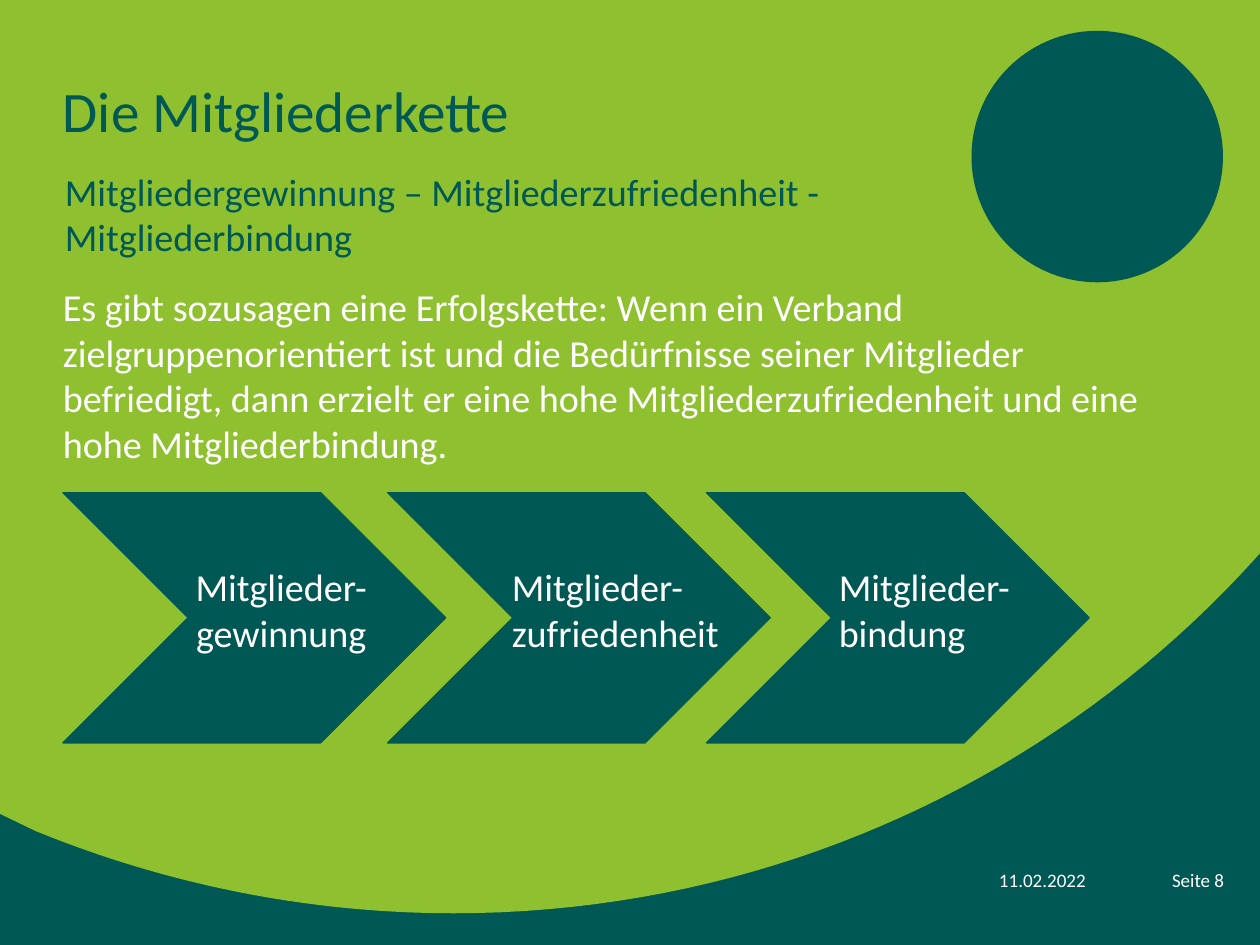
from dataclasses import dataclass

from pptx import Presentation
from pptx.dml.color import RGBColor
from pptx.enum.shapes import MSO_SHAPE
from pptx.enum.text import MSO_ANCHOR, PP_ALIGN
from pptx.shapes.autoshape import Shape
from pptx.slide import Slide
from pptx.util import Inches, Pt

TEAL = RGBColor(0x00, 0x58, 0x55)
GREEN = RGBColor(0x8E, 0xC0, 0x2F)
WHITE = RGBColor(0xFF, 0xFF, 0xFF)
FONT = "Calibri"
CHEVRON = MSO_SHAPE.CHEVRON
OVAL = MSO_SHAPE.OVAL
TOP = MSO_ANCHOR.TOP
LEFT, CENTER, RIGHT = PP_ALIGN.LEFT, PP_ALIGN.CENTER, PP_ALIGN.RIGHT

CM_PER_INCH = 2.54
SLIDE_WIDTH, SLIDE_HEIGHT = 28 / CM_PER_INCH, 21 / CM_PER_INCH
CHAIN_TOP, LINK_WIDTH, LINK_HEIGHT = 4.31, 3.35, 2.19
LABEL_TOP, LABEL_HEIGHT = 4.88, 0.91
FOOTER_TOP, FOOTER_HEIGHT = 7.6, 0.39
CURVE_STEPS = 40

Point = tuple[float, float]


@dataclass(frozen=True)
class Passage:
    text: str
    left: float
    top: float
    width: float
    height: float
    size: int
    color: RGBColor = WHITE
    align: PP_ALIGN = LEFT
    inset_x: float = 0
    inset_y: float = 0


@dataclass(frozen=True)
class ChainLink:
    text: str
    left: float
    label_left: float
    label_width: float
    align: PP_ALIGN = LEFT


PASSAGES = [
    Passage("Die Mitgliederkette", 0.55, 0.66, 7.6, 0.7, 36, TEAL),
    Passage("Mitgliedergewinnung – Mitgliederzufriedenheit - Mitgliederbindung",
            0.47, 1.42, 6.93, 0.91, 24, TEAL, inset_x=0.1, inset_y=0.05),
    Passage("Es gibt sozusagen eine Erfolgskette: Wenn ein Verband "
            "zielgruppenorientiert ist und die Bedürfnisse seiner Mitglieder "
            "befriedigt, dann erzielt er eine hohe Mitgliederzufriedenheit "
            "und eine hohe Mitgliederbindung.", 0.55, 2.48, 9.69, 1.7, 24),
    Passage("11.02.2022", 8.74, FOOTER_TOP, 1.65, FOOTER_HEIGHT, 12),
    Passage("Seite 8", 8.59, FOOTER_TOP, 2.12, FOOTER_HEIGHT, 12, align=RIGHT),
]

CHAIN = [
    ChainLink("Mitglieder-gewinnung", 0.55, 1.3, 2.32, CENTER),
    ChainLink("Mitglieder-zufriedenheit", 3.39, 4.38, 2.35),
    ChainLink("Mitglieder-bindung", 6.18, 7.24, 2.44),
]

CURVES: list[tuple[Point, Point, Point, Point]] = [
    ((10.98, 4.89), (9.26, 6.79), (6.76, 7.99), (3.97, 7.99)),
    ((3.97, 7.99), (2.67, 7.99), (1.44, 7.73), (0.31, 7.27)),
]


def curve_point(curve: tuple[Point, Point, Point, Point], t: float) -> Point:
    u = 1 - t
    weights = (u ** 3, 3 * u * u * t, 3 * u * t * t, t ** 3)
    x = sum(weight * point[0] for weight, point in zip(weights, curve))
    y = sum(weight * point[1] for weight, point in zip(weights, curve))
    return x, y


def paint(shape: Shape, color: RGBColor) -> None:
    shape.shadow.inherit = False
    shape.fill.solid()
    shape.fill.fore_color.rgb = color
    shape.line.fill.background()


def draw_backdrop(slide: Slide) -> None:
    slide.background.fill.solid()
    slide.background.fill.fore_color.rgb = TEAL
    outline: list[Point] = [(SLIDE_WIDTH, 0), (SLIDE_WIDTH, 4.84), CURVES[0][0]]
    for curve in CURVES:
        outline += [curve_point(curve, step / CURVE_STEPS)
                    for step in range(1, CURVE_STEPS + 1)]
    outline.append((0, 7.12))
    builder = slide.shapes.build_freeform(0, 0)
    builder.add_line_segments([(Inches(x), Inches(y)) for x, y in outline])
    paint(builder.convert_to_shape(), GREEN)
    disc = slide.shapes.add_shape(
        OVAL, Inches(8.5), Inches(0.27), Inches(2.2), Inches(2.2))
    paint(disc, TEAL)


def write(slide: Slide, passage: Passage) -> None:
    box = slide.shapes.add_textbox(
        Inches(passage.left), Inches(passage.top),
        Inches(passage.width), Inches(passage.height))
    frame = box.text_frame
    frame.word_wrap = True
    frame.vertical_anchor = TOP
    frame.margin_left = frame.margin_right = Inches(passage.inset_x)
    frame.margin_top = frame.margin_bottom = Inches(passage.inset_y)
    paragraph = frame.paragraphs[0]
    paragraph.alignment = passage.align
    run = paragraph.add_run()
    run.text = passage.text
    run.font.name = FONT
    run.font.size = Pt(passage.size)
    run.font.color.rgb = passage.color


def draw_link(slide: Slide, link: ChainLink) -> None:
    chevron = slide.shapes.add_shape(
        CHEVRON, Inches(link.left), Inches(CHAIN_TOP),
        Inches(LINK_WIDTH), Inches(LINK_HEIGHT))
    paint(chevron, TEAL)
    chevron.line.color.rgb = TEAL
    chevron.line.width = Pt(0.75)
    write(slide, Passage(link.text, link.label_left, LABEL_TOP, link.label_width,
                         LABEL_HEIGHT, 24, align=link.align,
                         inset_x=0.1, inset_y=0.05))


def main() -> None:
    deck = Presentation()
    deck.slide_width = Inches(SLIDE_WIDTH)
    deck.slide_height = Inches(SLIDE_HEIGHT)
    slide = deck.slides.add_slide(deck.slide_layouts[6])
    draw_backdrop(slide)
    for passage in PASSAGES:
        write(slide, passage)
    for link in CHAIN:
        draw_link(slide, link)
    deck.save("out.pptx")


if __name__ == "__main__":
    main()
